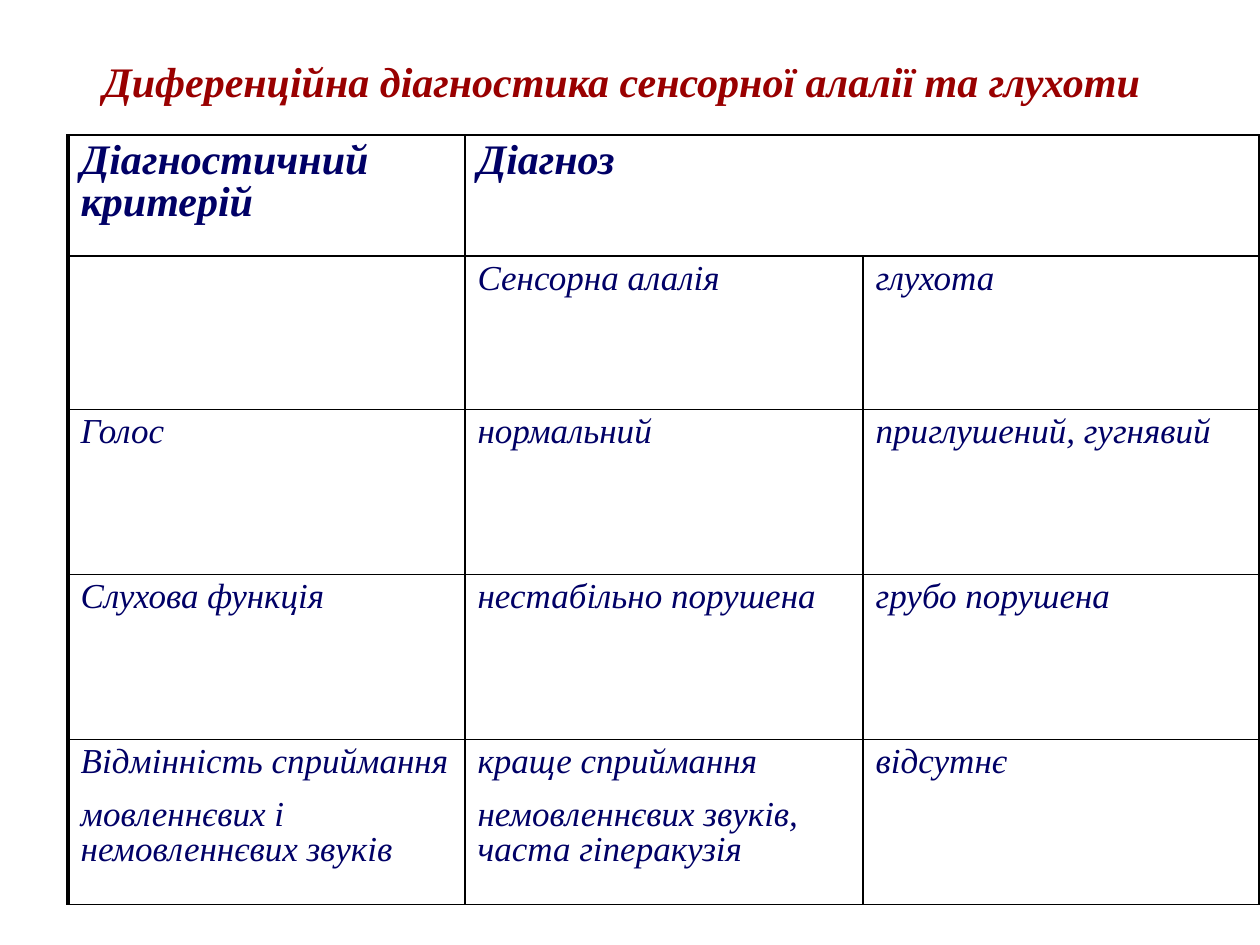
"""Build a slide with a table comparing sensory alalia and deafness."""
from lxml.etree import SubElement
from pptx import Presentation
from pptx.dml.color import RGBColor
from pptx.enum.text import MSO_ANCHOR
from pptx.oxml.ns import qn
from pptx.util import Inches, Pt

RED = RGBColor(0x99, 0x00, 0x00)
NAVY = RGBColor(0x00, 0x00, 0x66)
BLACK = RGBColor(0x00, 0x00, 0x00)
FONT = "Times New Roman"
THIN, THICK = Pt(1), Pt(2.25)

TITLE = "Диференційна діагностика сенсорної алалії та глухоти"
CRITERIA = [
    [["Діагностичний критерій"], ["Діагноз"], []],
    [[], ["Сенсорна алалія"], ["глухота"]],
    [["Голос"], ["нормальний"], ["приглушений, гугнявий"]],
    [["Слухова функція"], ["нестабільно порушена"], ["грубо порушена"]],
    [
        ["Відмінність сприймання", "мовленнєвих і немовленнєвих звуків"],
        ["краще сприймання", "немовленнєвих звуків, часта гіперакузія"],
        ["відсутнє"],
    ],
]
COLUMN_WIDTHS = [3.15, 3.16, 3.15]
ROW_HEIGHTS = [0.96, 1.22, 1.31, 1.31, 1.31]


def write(frame, lines, size, color, bold):
    for index, line in enumerate(lines):
        paragraph = frame.paragraphs[0] if index == 0 else frame.add_paragraph()
        paragraph.line_spacing = 0.9
        if index:
            paragraph.space_before = Pt(10)
        run = paragraph.add_run()
        run.text = line
        run.font.name = FONT
        run.font.size = Pt(size)
        run.font.bold = bold
        run.font.italic = True
        run.font.color.rgb = color


def add_borders(cell, widths):
    properties = cell._tc.get_or_add_tcPr()
    for side, width in widths.items():
        line = SubElement(properties, qn(f"a:ln{side}"), w=str(int(width)))
        fill = SubElement(line, qn("a:solidFill"))
        SubElement(fill, qn("a:srgbClr"), val=str(BLACK))


def add_title(slide):
    title = slide.shapes.add_textbox(Inches(0.72), Inches(0.13), Inches(8.57), Inches(1.07))
    title.text_frame.word_wrap = True
    title.text_frame.vertical_anchor = MSO_ANCHOR.MIDDLE
    write(title.text_frame, [TITLE], 24, RED, True)


def add_comparison(slide):
    comparison = slide.shapes.add_table(
        len(ROW_HEIGHTS), len(COLUMN_WIDTHS), Inches(0.54), Inches(1.07),
        Inches(sum(COLUMN_WIDTHS)), Inches(sum(ROW_HEIGHTS)),
    ).table
    for column, width in zip(comparison.columns, COLUMN_WIDTHS):
        column.width = Inches(width)
    for row, height in zip(comparison.rows, ROW_HEIGHTS):
        row.height = Inches(height)
    comparison.cell(0, 1).merge(comparison.cell(0, 2))
    last = len(COLUMN_WIDTHS) - 1
    for r, criterion in enumerate(CRITERIA):
        for c, lines in enumerate(criterion):
            cell = comparison.cell(r, c)
            outer_right = c == last or cell.is_merge_origin
            add_borders(cell, {
                "L": THICK if c == 0 else THIN,
                "R": THICK if outer_right else THIN,
                "T": THIN,
                "B": THIN,
            })
            cell.fill.background()
            write(cell.text_frame, lines, 24 if r == 0 else 20, NAVY, r == 0)


def main():
    deck = Presentation()
    deck.slide_width, deck.slide_height = Inches(10), Inches(7.5)
    slide = deck.slides.add_slide(deck.slide_layouts[6])
    add_title(slide)
    add_comparison(slide)
    deck.save("out.pptx")


if __name__ == "__main__":
    main()
